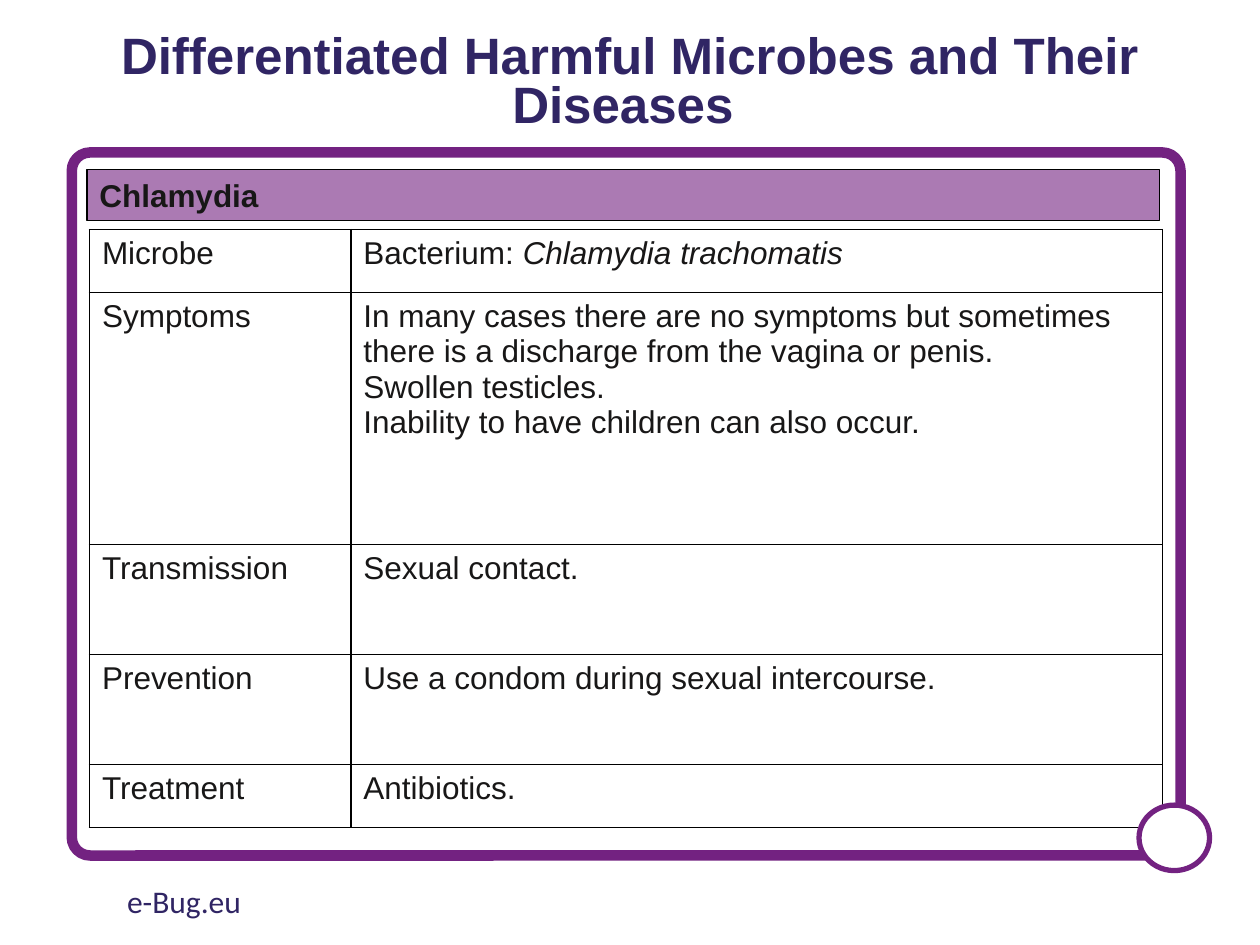
from typing import NamedTuple

from lxml import etree
from pptx import Presentation
from pptx import util as u
from pptx.dml.color import RGBColor
from pptx.enum import shapes, text
from pptx.oxml import ns

WIDE, HIGH = u.Inches(10), u.Inches(7.5)
NAVY = RGBColor(0x30, 0x25, 0x64)
INK = RGBColor(0x18, 0x17, 0x17)
PLUM = RGBColor(0x73, 0x22, 0x81)
LILAC = RGBColor(0xAB, 0x7A, 0xB3)
WHITE = RGBColor(0xFF, 0xFF, 0xFF)
BLACK = RGBColor(0, 0, 0)


class Box(NamedTuple):
    """A place given in percent of the slide's width and height."""
    x: float
    y: float
    w: float
    h: float

    def emu(self) -> tuple:
        return (int(WIDE * self.x / 100), int(HIGH * self.y / 100),
                int(WIDE * self.w / 100), int(HIGH * self.h / 100))


class Part(NamedTuple):
    words: str
    italic: bool = False


class Row(NamedTuple):
    label: str
    lines: list  # one list of parts for each paragraph
    share: float  # percent of the slide's height


ROWS = [
    Row("Microbe", [[Part("Bacterium: "), Part("Chlamydia trachomatis", True)]], 6.67),
    Row("Symptoms", [
        [Part("In many cases there are no symptoms but sometimes "
              "there is a discharge from the vagina or penis.")],
        [Part("Swollen testicles.")],
        [Part("Inability to have children can also occur.")]], 26.67),
    Row("Transmission", [[Part("Sexual contact.")]], 11.64),
    Row("Prevention", [[Part("Use a condom during sexual intercourse.")]], 11.64),
    Row("Treatment", [[Part("Antibiotics.")]], 6.67),
]
COLS = (20.75, 64.4)  # percent of the slide's width


def add_run(para, words: str, size: float = 18, color: RGBColor = INK,
            face: str = "Arial", bold: bool = False, italic: bool = False) -> None:
    run = para.add_run()
    run.text = words
    font = run.font
    font.name, font.size, font.bold, font.italic = face, u.Pt(size), bold, italic
    font.color.rgb = color


def add_form(slide, kind, box: Box, fill, line: RGBColor, width: float):
    form = slide.shapes.add_shape(kind, *box.emu())
    form.shadow.inherit = False
    if fill is None:
        form.fill.background()
    else:
        form.fill.solid()
        form.fill.fore_color.rgb = fill
    form.line.color.rgb = line
    form.line.width = u.Pt(width)
    return form


def rule_cell(cell) -> None:
    props = cell._tc.get_or_add_tcPr()
    for side in ("lnL", "lnR", "lnT", "lnB"):
        edge = etree.SubElement(props, ns.qn(f"a:{side}"), w=str(u.Pt(1)))
        fill = etree.SubElement(edge, ns.qn("a:solidFill"))
        etree.SubElement(fill, ns.qn("a:srgbClr"), val=str(BLACK))
    cell.fill.background()


def fill_cell(cell, lines: list) -> None:
    rule_cell(cell)
    frame = cell.text_frame
    for n, parts in enumerate(lines):
        para = frame.add_paragraph() if n else frame.paragraphs[0]
        for part in parts:
            add_run(para, part.words, italic=part.italic)


def add_facts(slide, x: float, y: float) -> None:
    box = Box(x, y, sum(COLS), sum(row.share for row in ROWS))
    table = slide.shapes.add_table(len(ROWS), len(COLS), *box.emu()).table
    table.first_row = table.horz_banding = False
    for col, share in zip(table.columns, COLS):
        col.width = int(WIDE * share / 100)
    for n, row in enumerate(ROWS):
        table.rows[n].height = int(HIGH * row.share / 100)
        fill_cell(table.cell(n, 0), [[Part(row.label)]])
        fill_cell(table.cell(n, 1), row.lines)


def main() -> None:
    deck = Presentation()
    deck.slide_width, deck.slide_height = WIDE, HIGH
    slide = deck.slides.add_slide(deck.slide_layouts[5])

    # Title
    title = slide.shapes.title
    title.left, title.top, title.width, title.height = Box(6.9, 2.67, 86.2, 12.53).emu()
    frame = title.text_frame
    frame.word_wrap = True
    frame.auto_size = text.MSO_AUTO_SIZE.NONE
    frame.vertical_anchor = text.MSO_ANCHOR.MIDDLE
    para = frame.paragraphs[0]
    para.alignment = text.PP_ALIGN.CENTER
    para.line_spacing = 0.8
    add_run(para, "Differentiated Harmful Microbes and Their Diseases ",
            29.2, NAVY, bold=True)

    # Disease heading
    kinds = shapes.MSO_SHAPE
    head = add_form(slide, kinds.RECTANGLE, Box(6.9, 17.95, 85.1, 5.4), LILAC, BLACK, 0.75)
    frame = head.text_frame
    frame.word_wrap = True
    frame.auto_size = text.MSO_AUTO_SIZE.SHAPE_TO_FIT_TEXT
    frame.vertical_anchor = text.MSO_ANCHOR.TOP
    frame.paragraphs[0].alignment = text.PP_ALIGN.LEFT
    add_run(frame.paragraphs[0], "Chlamydia", bold=True)

    # Facts table
    add_facts(slide, 7.1, 24.3)

    # Purple border with its corner ring
    border = add_form(slide, kinds.ROUNDED_RECTANGLE, Box(5.7, 16.13, 88, 74.4), None, PLUM, 6)
    border.adjustments[0] = 0.026
    add_form(slide, kinds.OVAL, Box(90.4, 85.2, 5.6, 6.93), WHITE, PLUM, 3)

    # Web address
    foot = slide.shapes.add_textbox(*Box(9.1, 92.67, 33.8, 5.33).emu())
    foot.text_frame.word_wrap = True
    add_run(foot.text_frame.paragraphs[0], "e-Bug.eu", color=NAVY, face="Calibri")

    deck.save("out.pptx")


if __name__ == "__main__":
    main()
